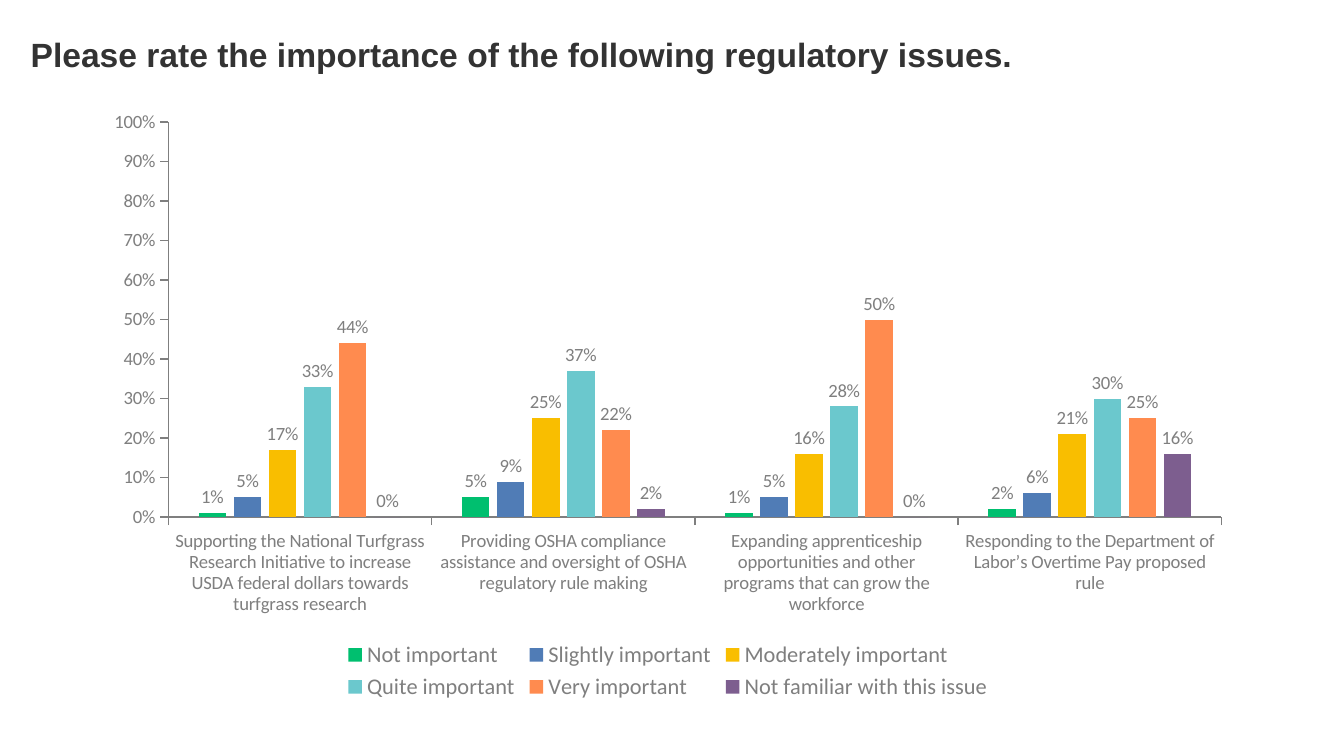
from pptx import Presentation
from pptx.chart.data import CategoryChartData
from pptx.dml.color import RGBColor
from pptx.enum.chart import (
    XL_CHART_TYPE, XL_LABEL_POSITION, XL_LEGEND_POSITION,
    XL_TICK_LABEL_POSITION, XL_TICK_MARK)
from pptx.enum.text import MSO_ANCHOR
from pptx.util import Inches, Pt

COLUMN = XL_CHART_TYPE.COLUMN_CLUSTERED
OUTER = XL_LABEL_POSITION.OUTSIDE_END
BOTTOM = XL_LEGEND_POSITION.BOTTOM
LOW = XL_TICK_LABEL_POSITION.LOW
OUT, NONE = XL_TICK_MARK.OUTSIDE, XL_TICK_MARK.NONE
BASE = MSO_ANCHOR.BOTTOM

WIDTH = Inches(10)
HEIGHT = WIDTH * 9 // 16
DARK, GREY = "333333", "7F7F7F"
TITLE = "Please rate the importance of the following regulatory issues."
ISSUES = [
    "Supporting the National Turfgrass Research Initiative to increase "
    "USDA federal dollars towards turfgrass research",
    "Providing OSHA compliance assistance and oversight of OSHA "
    "regulatory rule making",
    "Expanding apprenticeship opportunities and other programs that can "
    "grow the workforce",
    "Responding to the Department of Labor’s Overtime Pay proposed rule",
]
RATINGS = [
    ("Not important", "00BF6F", (0.01, 0.05, 0.01, 0.02)),
    ("Slightly important", "507CB6", (0.05, 0.09, 0.05, 0.06)),
    ("Moderately important", "F9BE00", (0.17, 0.25, 0.16, 0.21)),
    ("Quite important", "6BC8CD", (0.33, 0.37, 0.28, 0.3)),
    ("Very important", "FF8B4F", (0.44, 0.22, 0.5, 0.25)),
    ("Not familiar with this issue", "7D5E8F", (0, 0.02, 0, 0.16)),
]


def paint(target, color):
    """Give a font or a fill one solid colour."""
    if hasattr(target, "solid"):
        target.solid()
        target.fore_color.rgb = RGBColor.from_string(color)
    else:
        target.color.rgb = RGBColor.from_string(color)


def set_font(font, size, color, name="Calibri", bold=False):
    """Set the face, size, colour and weight of a font."""
    font.name, font.size, font.bold = name, Pt(size), bold
    paint(font, color)


def add_title(slide):
    """Add the question as the slide heading."""
    box = slide.shapes.add_textbox(
        Inches(0.13), Inches(0.09), Inches(9), Inches(0.51))
    frame = box.text_frame
    frame.word_wrap = True
    frame.vertical_anchor = BASE
    line = frame.paragraphs[0]
    line.text = TITLE
    set_font(line.font, 18, DARK, "Arial", True)


def style_axis(axis):
    """Give an axis grey labels, a thin line and outer ticks."""
    axis.has_major_gridlines = False
    axis.major_tick_mark, axis.minor_tick_mark = OUT, NONE
    set_font(axis.tick_labels.font, 10, GREY)
    axis.format.line.width = Pt(0.75)
    paint(axis.format.line.fill, GREY)


def style_bars(series, color):
    """Colour one rating's bars and label them in percent."""
    series.invert_if_negative = False
    paint(series.format.fill, color)
    labels = series.data_labels
    labels.show_value = True
    labels.number_format = "0%"
    labels.number_format_is_linked = False
    labels.position = OUTER
    set_font(labels.font, 10, GREY)


def add_ratings(slide):
    """Add the clustered column chart of ratings per issue."""
    data = CategoryChartData(number_format="0%")
    data.categories = ISSUES
    for name, _, values in RATINGS:
        data.add_series(name, values)
    chart = slide.shapes.add_chart(
        COLUMN, Inches(0.68), Inches(0.74), Inches(8.58), Inches(4.51),
        data).chart
    chart.has_title = False
    set_font(chart.font, 18, DARK)
    plot = chart.plots[0]
    plot.gap_width, plot.overlap = 219, -27
    plot.vary_by_categories = False
    for series, (_, color, _) in zip(plot.series, RATINGS):
        style_bars(series, color)
    issues, scale = chart.category_axis, chart.value_axis
    style_axis(issues)
    style_axis(scale)
    issues.tick_label_position = LOW
    scale.minimum_scale, scale.maximum_scale = 0, 1
    scale.major_unit = 0.1
    scale.tick_labels.number_format = "0%"
    scale.tick_labels.number_format_is_linked = False
    chart.has_legend = True
    chart.legend.position = BOTTOM
    chart.legend.include_in_layout = False
    set_font(chart.legend.font, 12, GREY)


def main():
    """Build the slide and save it."""
    deck = Presentation()
    deck.slide_width, deck.slide_height = WIDTH, HEIGHT
    slide = deck.slides.add_slide(deck.slide_layouts[6])
    add_title(slide)
    add_ratings(slide)
    deck.save("out.pptx")


if __name__ == "__main__":
    main()
